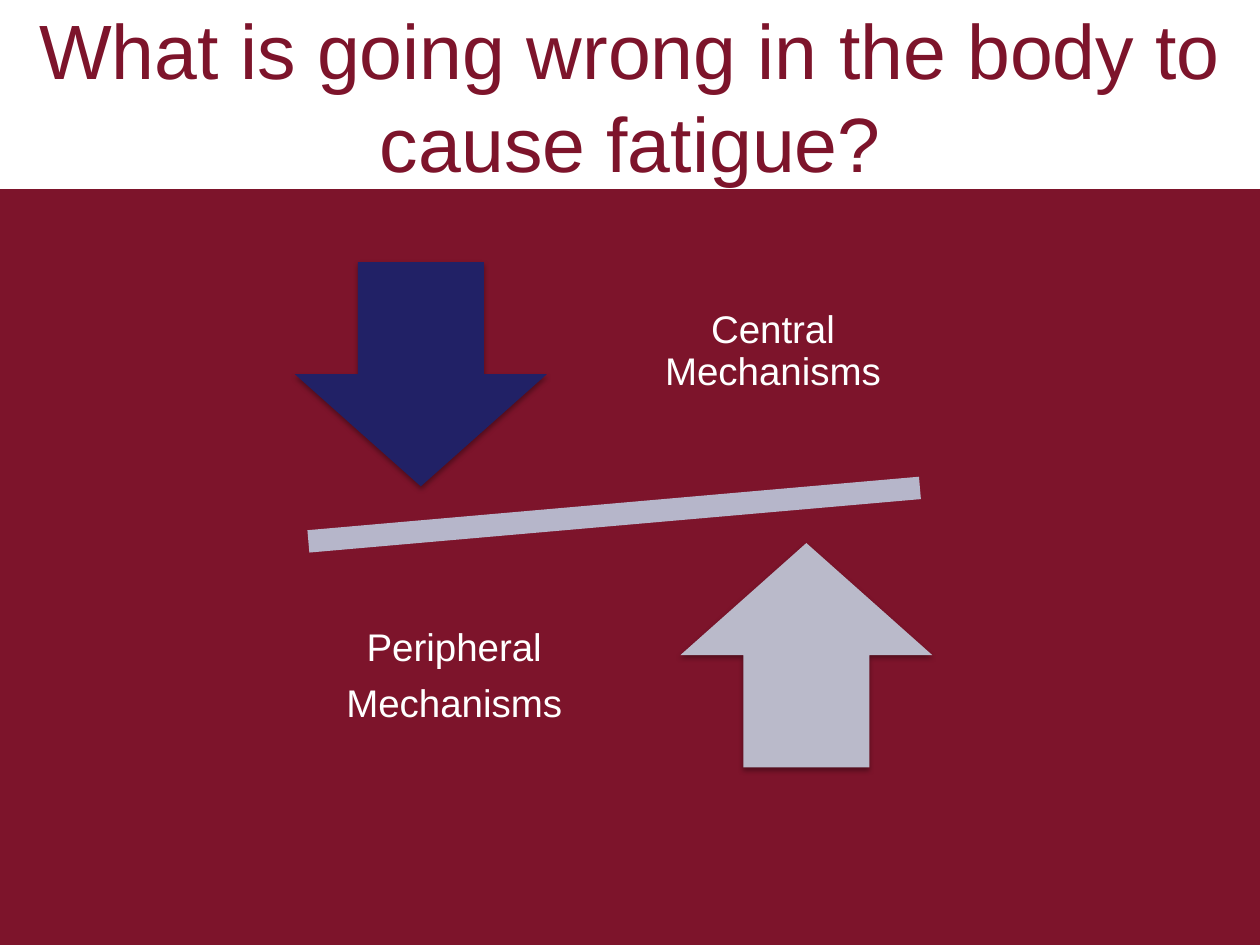
from dataclasses import dataclass

from lxml import etree
from pptx import Presentation
from pptx.dml.color import RGBColor
from pptx.enum.shapes import MSO_SHAPE as Shape
from pptx.enum.text import MSO_ANCHOR as Anchor, PP_ALIGN as Align
from pptx.oxml.ns import qn
from pptx.util import Inches, Pt


@dataclass(frozen=True)
class Theme:
    maroon: str = "7D142B"
    white: str = "FFFFFF"
    navy: str = "212166"
    beam: str = "B6B6CA"
    silver: str = "BABACA"
    shadow: str = "000000"
    font: str = "Arial"
    title_size: int = 44
    label_size: int = 22


THEME = Theme()


def style_paragraph(paragraph, size, color):
    paragraph.alignment = Align.CENTER
    for run in paragraph.runs:
        run.font.name = THEME.font
        run.font.size = Pt(size)
        run.font.color.rgb = RGBColor.from_string(color)


def set_margins(text_frame, margin):
    text_frame.margin_left = text_frame.margin_right = Inches(margin)
    text_frame.margin_top = text_frame.margin_bottom = Inches(margin)


def add_plain_shape(shapes, kind, box, color):
    shape = shapes.add_shape(kind, *map(Inches, box))
    shape.shadow.inherit = False
    shape.fill.solid()
    shape.fill.fore_color.rgb = RGBColor.from_string(color)
    shape.line.fill.background()
    return shape


def add_soft_shadow(shape):
    effects = shape._element.spPr.find(qn("a:effectLst"))
    shadow = etree.SubElement(
        effects, qn("a:outerShdw"), blurRad=str(Pt(3.1)), dist=str(Pt(1.8)),
        dir="5400000", rotWithShape="0")
    color = etree.SubElement(shadow, qn("a:srgbClr"), val=THEME.shadow)
    etree.SubElement(color, qn("a:alpha"), val="35000")


def add_label(shapes, box, text):
    text_frame = shapes.add_textbox(*map(Inches, box)).text_frame
    text_frame.word_wrap = True
    text_frame.vertical_anchor = Anchor.MIDDLE
    set_margins(text_frame, 0.17)
    text_frame.text = text
    for paragraph in text_frame.paragraphs:
        paragraph.line_spacing = 0.9
        paragraph.space_after = Pt(8)
        style_paragraph(paragraph, THEME.label_size, THEME.white)


def build_header(slide, left, top, width, height):
    # White band, kept behind the title
    band = add_plain_shape(slide.shapes, Shape.RECTANGLE,
                           (left, top, width, height), THEME.white)
    slide.shapes._spTree.insert(2, band._element)

    # Title
    title = slide.shapes.title
    title.left, title.top = Inches(left + 0.2), Inches(top + 0.13)
    title.width, title.height = Inches(width - 0.39), Inches(height - 0.25)
    text_frame = title.text_frame
    text_frame.text = "What is going wrong in the body to cause fatigue?"
    text_frame.word_wrap = True
    text_frame.vertical_anchor = Anchor.MIDDLE
    set_margins(text_frame, 0.05)
    style_paragraph(text_frame.paragraphs[0], THEME.title_size, THEME.maroon)


def build_balance(slide, left, top, width, height):
    shapes = slide.shapes.add_group_shape().shapes
    arrow_width, arrow_height = 2, 1.78
    label_width, label_height = 2.13, 1.87

    # Tilted beam across the middle
    beam_height = 0.76
    beam_top = top + (height - beam_height) / 2
    beam = add_plain_shape(shapes, Shape.MATH_MINUS,
                           (left, beam_top, width, beam_height), THEME.beam)
    beam.rotation = 355

    # Each arrow faces the label on the other side of the beam
    bottom = top + height
    sides = [
        (Shape.DOWN_ARROW, THEME.navy, 0.78, top + 0.22,
         "Central Mechanisms", 3.51, top),
        (Shape.UP_ARROW, THEME.silver, 3.84, bottom - 0.22 - arrow_height,
         "Peripheral\nMechanisms", 0.98, bottom - label_height),
    ]
    for kind, color, arrow_x, arrow_y, text, label_x, label_y in sides:
        arrow = add_plain_shape(
            shapes, kind, (left + arrow_x, arrow_y, arrow_width, arrow_height), color)
        add_soft_shadow(arrow)
        add_label(shapes, (left + label_x, label_y, label_width, label_height), text)


def main():
    presentation = Presentation()
    presentation.slide_width, presentation.slide_height = Inches(10), Inches(7.5)
    slide = presentation.slides.add_slide(presentation.slide_layouts[5])
    slide.background.fill.solid()
    slide.background.fill.fore_color.rgb = RGBColor.from_string(THEME.maroon)
    build_header(slide, 0, 0, 10, 1.5)
    build_balance(slide, 1.56, 1.86, 6.63, 4.45)
    presentation.save("out.pptx")


if __name__ == "__main__":
    main()
